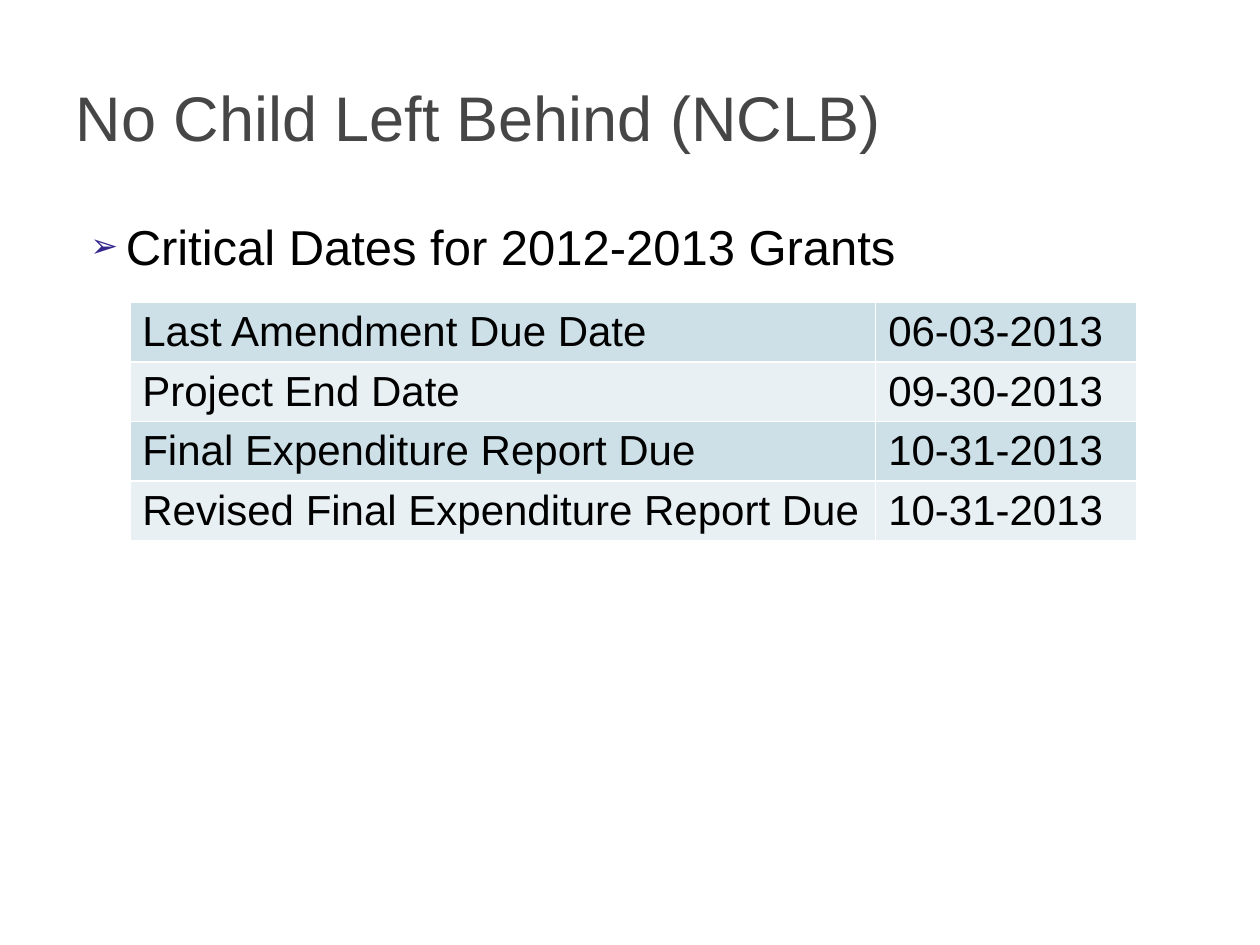
from dataclasses import dataclass

from lxml import etree
from pptx import Presentation, util as u
from pptx.dml.color import RGBColor
from pptx.enum import text
from pptx.oxml.ns import qn


@dataclass(frozen=True)
class Theme:
    font: str = "Arial"
    title_size: int = 36
    body_size: int = 28
    table_size: int = 24
    title_color: str = "464646"
    text_color: str = "000000"
    bullet_color: str = "34278D"
    background: str = "FFFFFF"
    border: str = "FFFFFF"
    bands: tuple = ("CDE0E8", "E8F0F4")


def write_text(frame, content, *, font, size, color, anchor=text.MSO_ANCHOR.TOP):
    frame.word_wrap = True
    frame.auto_size = text.MSO_AUTO_SIZE.NONE
    frame.vertical_anchor = anchor
    return write_paragraph(frame.paragraphs[0], content, font=font, size=size, color=color)


def write_paragraph(paragraph, content, *, font, size, color):
    paragraph.alignment = text.PP_ALIGN.LEFT
    run = paragraph.add_run()
    run.text = content
    run.font.name = font
    run.font.size = u.Pt(size)
    run.font.color.rgb = RGBColor.from_string(color)
    return paragraph


def add_child(parent, tag, **attributes):
    child = etree.SubElement(parent, qn(tag))
    for name, value in attributes.items():
        child.set(name, str(value))
    return child


class GridSlide:
    columns, rows = 20, 15

    def __init__(self, presentation, theme):
        self.theme = theme
        self.column = presentation.slide_width // self.columns
        self.row = presentation.slide_height // self.rows
        self.slide = presentation.slides.add_slide(presentation.slide_layouts[5])
        fill = self.slide.background.fill
        fill.solid()
        fill.fore_color.rgb = RGBColor.from_string(theme.background)

    def box(self, left, top, width, height):
        return (round(left * self.column), round(top * self.row),
                round(width * self.column), round(height * self.row))

    def title(self, content, *area):
        shape = self.slide.shapes.title
        shape.left, shape.top, shape.width, shape.height = self.box(*area)
        write_text(shape.text_frame, content, font=self.theme.font, size=self.theme.title_size,
                   color=self.theme.title_color, anchor=text.MSO_ANCHOR.MIDDLE)

    def bullet(self, content, *area):
        shape = self.slide.shapes.add_textbox(*self.box(*area))
        paragraph = write_text(shape.text_frame, content, font=self.theme.font,
                               size=self.theme.body_size, color=self.theme.text_color)
        properties = paragraph._p.get_or_add_pPr()
        properties.set("marL", str(u.Inches(0.4)))
        properties.set("indent", str(u.Inches(-0.28)))
        add_child(add_child(properties, "a:buClr"), "a:srgbClr", val=self.theme.bullet_color)
        add_child(properties, "a:buSzPct", val=68000)
        add_child(properties, "a:buFont", typeface=self.theme.font)
        add_child(properties, "a:buChar", char="➢")

    def table(self, records, left, top, widths, row_height):
        area = self.box(left, top, sum(widths), row_height * len(records))
        table = self.slide.shapes.add_table(len(records), len(widths), *area).table
        table.first_row = False
        for column, width in zip(table.columns, widths):
            column.width = round(width * self.column)
        for index, record in enumerate(records):
            table.rows[index].height = round(row_height * self.row)
            band = self.theme.bands[index % len(self.theme.bands)]
            for position, content in enumerate(record):
                self.cell(table.cell(index, position), content, band)

    def cell(self, cell, content, color):
        write_paragraph(cell.text_frame.paragraphs[0], content, font=self.theme.font,
                        size=self.theme.table_size, color=self.theme.text_color)
        properties = cell._tc.get_or_add_tcPr()
        for side in ("L", "R", "T", "B"):
            line = add_child(properties, f"a:ln{side}", w=u.Pt(1))
            add_child(add_child(line, "a:solidFill"), "a:srgbClr", val=self.theme.border)
        cell.fill.solid()
        cell.fill.fore_color.rgb = RGBColor.from_string(color)


def main():
    presentation = Presentation()
    presentation.slide_width, presentation.slide_height = u.Inches(10), u.Inches(7.5)
    slide = GridSlide(presentation, Theme())
    slide.title("No Child Left Behind (NCLB)", 1, 0.6, 18, 2.5)
    slide.bullet("Critical Dates for 2012-2013 Grants", 1, 3.34, 18, 9.8)
    slide.table([
        ("Last Amendment Due Date", "06-03-2013"),
        ("Project End Date", "09-30-2013"),
        ("Final Expenditure Report Due", "10-31-2013"),
        ("Revised Final Expenditure Report Due", "10-31-2013"),
    ], left=2.06, top=4.8, widths=(11.84, 4.14), row_height=0.94)
    presentation.save("out.pptx")


if __name__ == "__main__":
    main()
